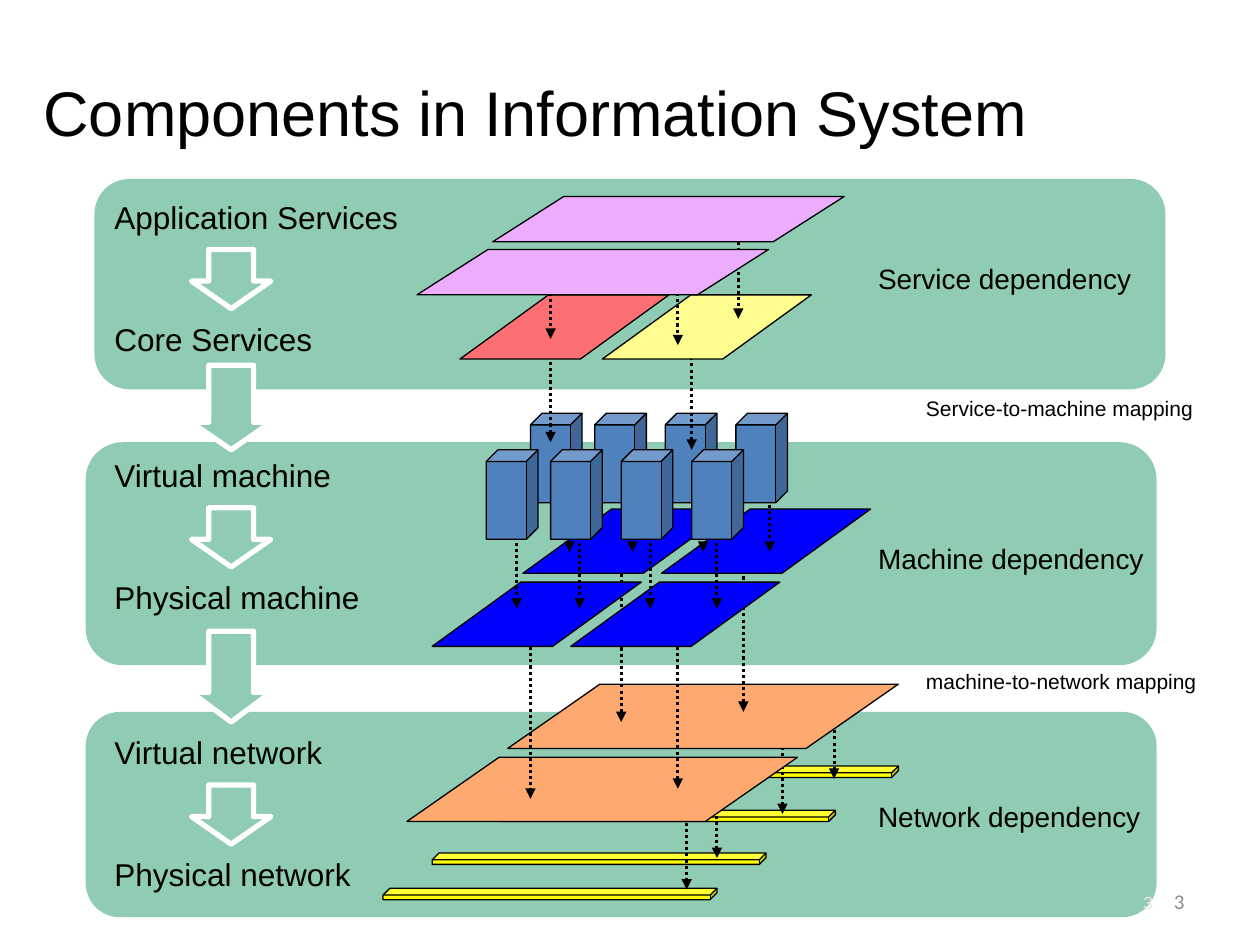
from lxml import etree
from pptx import Presentation
from pptx.dml.color import RGBColor
from pptx.enum.shapes import MSO_CONNECTOR, MSO_SHAPE
from pptx.enum.text import MSO_ANCHOR, PP_ALIGN
from pptx.oxml.ns import qn
from pptx.util import Inches, Pt

ROUND = MSO_SHAPE.ROUNDED_RECTANGLE
CUBE = MSO_SHAPE.CUBE
PLANE = MSO_SHAPE.PARALLELOGRAM
DOWN = MSO_SHAPE.DOWN_ARROW
STRAIGHT = MSO_CONNECTOR.STRAIGHT
LEFT, CENTER, RIGHT = PP_ALIGN.LEFT, PP_ALIGN.CENTER, PP_ALIGN.RIGHT
MIDDLE, TOP = MSO_ANCHOR.MIDDLE, MSO_ANCHOR.TOP

BLACK = RGBColor(0x00, 0x00, 0x00)
WHITE = RGBColor(0xFF, 0xFF, 0xFF)
GREEN = RGBColor(0x8F, 0xCC, 0xB3)
YELLOW = RGBColor(0xFF, 0xFF, 0x00)
ORANGE = RGBColor(0xFE, 0xA9, 0x70)
BLUE = RGBColor(0x00, 0x00, 0xFF)
STEEL = RGBColor(0x4F, 0x81, 0xBD)
RED = RGBColor(0xFC, 0x70, 0x73)
LEMON = RGBColor(0xFF, 0xFD, 0x8D)
PINK = RGBColor(0xEC, 0xAD, 0xFF)
CREAM = RGBColor(0xEE, 0xEC, 0xE1)
GRAY = RGBColor(0x8C, 0x8C, 0x8C)

deck = Presentation()
deck.slide_width, deck.slide_height = Inches(10), Inches(7.5)
COL, ROW = deck.slide_width / 100, deck.slide_height / 75


def place(box, x, y):
    return round((box[0] + x) * COL), round((box[1] + y) * ROW)


def size(w, h):
    return round(w * COL), round(h * ROW)


def solid(slide, box, kind, spot, dims, fill, adj=(), line=BLACK, weight=0.75):
    shape = slide.shapes.add_shape(kind, *place(box, *spot), *size(*dims))
    shape.shadow.inherit = False
    shape.fill.solid()
    shape.fill.fore_color.rgb = fill
    if line is None:
        shape.line.fill.background()
    else:
        shape.line.color.rgb = line
        shape.line.width = Pt(weight)
    for i, value in enumerate(adj):
        shape.adjustments[i] = value


def drop(slide, box, x, y, length):
    link = slide.shapes.add_connector(
        STRAIGHT, *place(box, x, y), *place(box, x, y + length))
    link.line.color.rgb = BLACK
    link.line.width = Pt(1.75)
    edge = link.line._get_or_add_ln()
    etree.SubElement(edge, qn("a:prstDash"), val="sysDot")
    etree.SubElement(edge, qn("a:tailEnd"), type="triangle")
    etree.SubElement(link._element.spPr, qn("a:effectLst"))


def label(slide, box, words, points, color=BLACK, font="Arial",
          align=LEFT, anchor=TOP, wrap=False):
    x, y, w, h = box
    frame = slide.shapes.add_textbox(*place((x, y), 0, 0), *size(w, h)).text_frame
    frame.word_wrap = wrap
    frame.vertical_anchor = anchor
    para = frame.paragraphs[0]
    para.alignment = align
    run = para.add_run()
    run.text = words
    run.font.size = Pt(points)
    run.font.name = font
    run.font.color.rgb = color


def panel(slide, box):
    solid(slide, box, ROUND, (0, 0), box[2:], GREEN, line=None)


def stair(slide, box, upper, lower, flow=None):
    x, y = box
    for row, (words, wide) in enumerate((upper, lower)):
        label(slide, (x, y + row * 9.7, wide, 4), words, 18)
    steps = [(4.6, 4.7, 0.465)]
    if flow:
        steps.append(flow)
    for top, tall, head in steps:
        solid(slide, box, DOWN, (7.1, top), (6.3, tall), GREEN,
              (0.564, head), WHITE, 3)


def network(slide, box):
    panel(slide, box)
    for spot in ((23.6, 14), (27.5, 11.2), (33, 7.8), (38, 4.3)):
        solid(slide, box, CUBE, spot, (26.5, 0.9), YELLOW, (0.596,))
    for x, y in ((50.1, 5.8), (47.7, 8.3), (55.3, 2.3), (59.4, -0.5)):
        drop(slide, box, x, y, 5.8)
    for spot in ((25.5, 3.6), (33.5, -2.2)):
        solid(slide, box, PLANE, spot, (31, 5.1), ORANGE, (1.435,))


def machine(slide, box):
    panel(slide, box)
    for x, y, length in ((52.2, 8.7, 12.7), (47, 14.3, 13.2),
                         (35.3, 14.3, 14), (42.5, 7.5, 14.7)):
        drop(slide, box, x, y, length)
    for x, y in ((34.7, 5.3), (27.5, 11.1)):
        for step in (0, 11):
            solid(slide, box, PLANE, (x + step, y), (16.6, 5.1), BLUE, (1.38,))
    for x, y in ((38.4, 3), (34.2, 7.5)):
        for step in (0, 5, 10.6, 15.9):
            drop(slide, box, x + step, y, 5.7)
    for x, y in ((35.3, -2.3), (31.8, 0.6)):
        for step in (0, 5.1, 10.7, 16.3):
            solid(slide, box, CUBE, (x + step, y), (4.1, 7.1), STEEL, (0.225,))


def service(slide, box):
    panel(slide, box)
    for x, y in ((47.4, 12.2), (36.2, 11.6)):
        drop(slide, box, x, y, 9.3)
    for x, fill in ((29, RED), (40.3, LEMON)):
        solid(slide, box, PLANE, (x, 9.2), (16.6, 5.1), fill, (1.38,))
    for x, y in ((51.1, 4), (36.2, 5.6), (46.3, 6.1)):
        drop(slide, box, x, y, 7.1)
    for spot in ((25.6, 5.6), (31.6, 1.4)):
        solid(slide, box, PLANE, spot, (27.9, 3.6), PINK, (1.567,))


def notes(slide, x, rows, points, tall):
    for y, wide, words in rows:
        label(slide, (x, y, wide, tall), words, points)


def heading(slide, box):
    label(slide, box, "Components in Information System", 36,
          align=CENTER, anchor=MIDDLE, wrap=True)


def footer(slide, box):
    x, y, w, h = box
    label(slide, (x, y + 0.5, w - 2.5, h - 0.7), "3", 10, CREAM,
          align=RIGHT, anchor=MIDDLE, wrap=True)
    label(slide, box, "3", 12, GRAY, "Calibri", RIGHT, MIDDLE, True)


def main():
    slide = deck.slides.add_slide(deck.slide_layouts[6])
    heading(slide, (0, 4.2, 85, 9.2))
    network(slide, (6.8, 56.5, 85, 16.3))
    machine(slide, (6.8, 35.1, 85, 17.7))
    service(slide, (7.5, 14.2, 85, 16.7))
    stair(slide, (8.1, 57.7), ("Virtual network", 18.5),
          ("Physical network", 20.8))
    stair(slide, (8.1, 35.7), ("Virtual machine", 19.2),
          ("Physical machine", 21.5), (14.4, 7.2, 0.373))
    stair(slide, (8.1, 15.2), ("Application Services", 24.5),
          ("Core Services", 17.7), (13.8, 6.7, 0.346))
    notes(slide, 72.5, ((30.9, 23.2, "Service-to-machine mapping"),
                        (52.6, 23.5, "machine-to-network mapping")), 12, 3)
    notes(slide, 68.7, ((63, 22.9, "Network dependency"),
                        (42.5, 23.1, "Machine dependency"),
                        (20.3, 22.2, "Service dependency")), 16, 3.7)
    footer(slide, (71.7, 69.5, 23.3, 4))
    deck.save("out.pptx")


if __name__ == "__main__":
    main()
